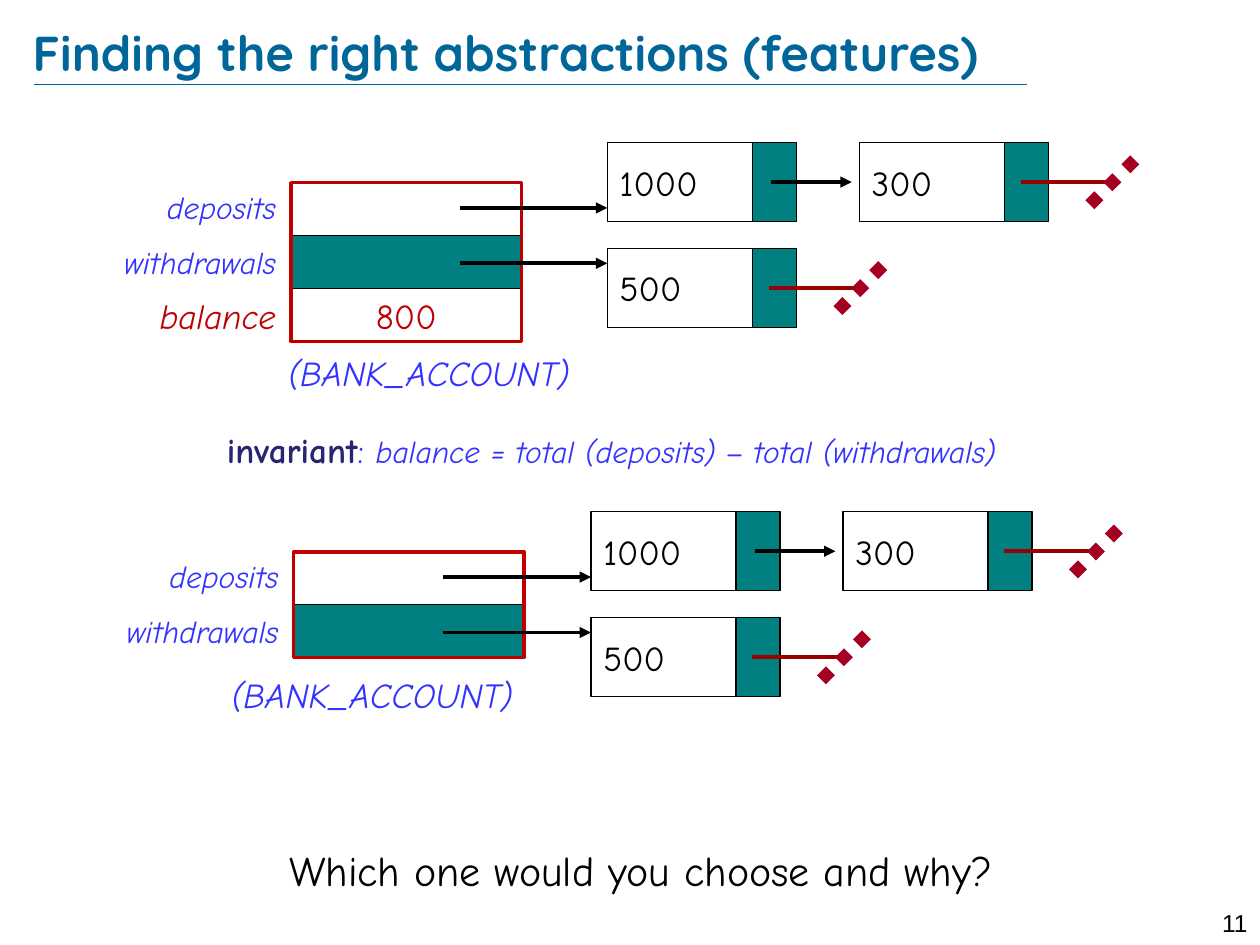
from lxml import etree
from pptx import Presentation
from pptx import util as u
from pptx.dml.color import RGBColor
from pptx.enum import dml, shapes, text
from pptx.oxml.ns import qn

BLACK = RGBColor(0x00, 0x00, 0x00)
WHITE = RGBColor(0xFF, 0xFF, 0xFF)
TEAL = RGBColor(0x00, 0x80, 0x80)
RED = RGBColor(0xC0, 0x00, 0x00)
MAROON = RGBColor(0x99, 0x00, 0x00)
CRIMSON = RGBColor(0xA5, 0x00, 0x21)
BLUE = RGBColor(0x33, 0x33, 0xFF)
NAVY = RGBColor(0x26, 0x26, 0x73)
TITLE_BLUE = RGBColor(0x00, 0x66, 0x99)
HAND = "Comic Neue"
LEFT, CENTER, RIGHT = text.PP_ALIGN.LEFT, text.PP_ALIGN.CENTER, text.PP_ALIGN.RIGHT

HEADING = "Finding the right abstractions (features)"
INVARIANT = [
    ("invariant", 20, NAVY, True, False),
    (": ", 20, BLUE, False, False),
    ("balance = total (deposits) – total (withdrawals)", 18, BLUE, False, True),
]
QUESTION = "Which one would you choose and why?"
PAGE = "11"

DEPOSITS = ("deposits", "", 18, BLUE, WHITE, -0.01)
WITHDRAWALS = ("withdrawals", "", 18, BLUE, TEAL, 0.01)
BALANCE = ("balance", "800", 20, RED, WHITE, 0)
CHAINS = [["1000", "300"], ["500"]]
ACCOUNTS = [
    {"left": 2.31, "top": 1.45, "chain_left": 4.82, "caption": (1.74, 2.74),
     "fields": [DEPOSITS, WITHDRAWALS, BALANCE]},
    {"left": 2.33, "top": 4.38, "chain_left": 4.69, "caption": (1.29, 5.3),
     "fields": [DEPOSITS, WITHDRAWALS]},
]
FIELD_W, FIELD_H = 1.83, 0.42
VALUE_W, LINK_W, NODE_H = 1.15, 0.35, 0.63
NODE_STEP, CHAIN_STEP = 2.0, 0.84

prs = Presentation()
prs.slide_width, prs.slide_height = u.Inches(10), u.Inches(7.5)
slide = prs.slides.add_slide(prs.slide_layouts[1])


def style(run, size, color, font=HAND, bold=False, italic=False):
    run.font.size, run.font.name = u.Pt(size), font
    run.font.bold, run.font.italic = bold, italic
    run.font.color.rgb = color


def place(part, left, top, width, height):
    part.left, part.top = u.Inches(left), u.Inches(top)
    part.width, part.height = u.Inches(width), u.Inches(height)


def add_label(words, box, size, color, align, font=HAND, italic=False):
    label = slide.shapes.add_textbox(*map(u.Inches, box))
    label.text_frame.word_wrap = True
    paragraph = label.text_frame.paragraphs[0]
    paragraph.text, paragraph.alignment = words, align
    style(paragraph.runs[0], size, color, font, italic=italic)


def add_box(left, top, width, height, fill=None, line=BLACK, weight=0.75,
            words="", color=BLACK, align=LEFT):
    box = slide.shapes.add_shape(
        shapes.MSO_SHAPE.RECTANGLE, *map(u.Inches, (left, top, width, height)))
    box.shadow.inherit = False
    if fill is None:
        box.fill.background()
    else:
        box.fill.solid()
        box.fill.fore_color.rgb = fill
    box.line.color.rgb, box.line.width = line, u.Pt(weight)
    if words:
        frame = box.text_frame
        frame.word_wrap = False
        frame.vertical_anchor = text.MSO_ANCHOR.MIDDLE
        frame.text = words
        frame.paragraphs[0].alignment = align
        style(frame.paragraphs[0].runs[0], 20, color)


def add_line(x1, y1, x2, y2, color, weight, arrow=False, dotted=False):
    line = slide.shapes.add_connector(
        shapes.MSO_CONNECTOR.STRAIGHT, *map(u.Inches, (x1, y1, x2, y2)))
    line.line.color.rgb, line.line.width = color, u.Pt(weight)
    if dotted:
        line.line.dash_style = dml.MSO_LINE.ROUND_DOT
    if arrow:
        etree.SubElement(line.line._get_or_add_ln(), qn("a:tailEnd"), type="triangle")
    etree.SubElement(line._element.spPr, qn("a:effectLst"))


def add_account(account):
    left, top, fields = account["left"], account["top"], account["fields"]
    for row, (name, value, size, color, fill, nudge) in enumerate(fields):
        y = top + row * FIELD_H
        add_box(left, y, FIELD_W, FIELD_H, fill, words=value, color=RED, align=CENTER)
        add_label(name, (left - 1.98, y + nudge, 1.96, 0.4), size, color, RIGHT, italic=True)
    add_box(left, top, FIELD_W, FIELD_H * len(fields), line=RED, weight=2)
    add_label("(BANK_ACCOUNT)", (*account["caption"], 3.33, 0.44), 20, BLUE, CENTER, italic=True)


def add_chain(values, left, top):
    middle = top + NODE_H / 2
    for position, value in enumerate(values):
        x = left + position * NODE_STEP
        add_box(x, top, VALUE_W, NODE_H, WHITE, words=value)
        add_box(x + VALUE_W, top, LINK_W, NODE_H, TEAL)
        if position < len(values) - 1:
            add_line(x + 1.3, middle, x + 1.94, middle, BLACK, 2.15, arrow=True)
        else:
            add_line(x + 1.28, middle, x + 1.97, middle, MAROON, 2)
            add_line(x + 1.83, middle + 0.18, x + 2.19, middle - 0.18, CRIMSON, 7.25, dotted=True)


add_line(0.27, 0.67, 8.15, 0.67, TITLE_BLUE, 0.25)
add_label(PAGE, (9.0, 7.16, 1.0, 0.24), 14, BLACK, RIGHT, "Arial")

heading = slide.shapes.title
place(heading, 0.26, 0.02, 7.9, 0.79)
frame = heading.text_frame
frame.text = HEADING
frame.auto_size = text.MSO_AUTO_SIZE.NONE
frame.vertical_anchor = text.MSO_ANCHOR.MIDDLE
frame.margin_left = frame.margin_right = frame.margin_top = frame.margin_bottom = 0
frame.paragraphs[0].alignment = LEFT
style(frame.paragraphs[0].runs[0], 28, TITLE_BLUE, "Quicksand", bold=True)

for account in ACCOUNTS:
    add_account(account)
    chain_left, top = account["chain_left"], account["top"]
    for row, values in enumerate(CHAINS):
        add_chain(values, chain_left, top - 0.32 + row * CHAIN_STEP)
        y = top + 0.2 + row * 0.44
        add_line(chain_left - 1.17, y, chain_left, y, BLACK, 2.15, arrow=True)

invariant = slide.placeholders[1]
place(invariant, 0.25, 3.35, 9.21, 0.54)
invariant.text_frame.auto_size = text.MSO_AUTO_SIZE.NONE
rule = invariant.text_frame.paragraphs[0]
properties = rule._p.get_or_add_pPr()
properties.set("marL", "0")
properties.set("indent", "0")
etree.SubElement(properties, qn("a:buNone"))
rule.alignment = CENTER
rule.space_before = u.Pt(0)
for words, size, color, bold, italic in INVARIANT:
    run = rule.add_run()
    run.text = words
    style(run, size, color, bold=bold, italic=italic)

add_label(QUESTION, (0.48, 6.65, 9.21, 0.54), 24, BLACK, CENTER)

prs.save("out.pptx")
